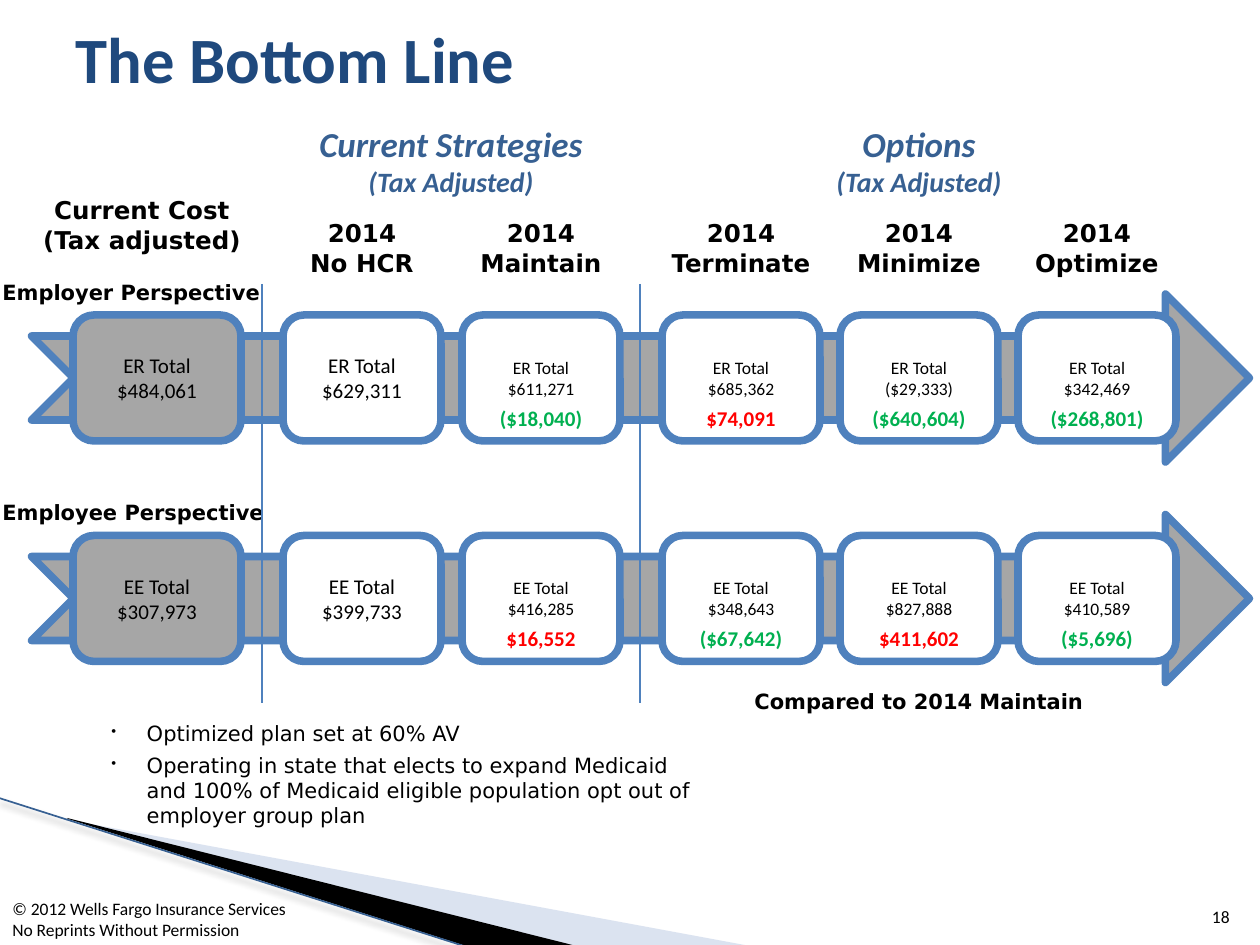
"""Build the slide that sets employer and employee costs side by side."""
from lxml import etree
from pptx import Presentation
from pptx import util as u
from pptx.dml.color import RGBColor
from pptx.enum import shapes, text
from pptx.oxml import parse_xml
from pptx.oxml.ns import nsdecls, qn

PX = 914400 / 126
THEME = {
    "hue": {"navy": "1F497D", "ink": "000000", "blue": "4F81BD", "steel": "376092",
            "gray": "A6A6A6", "white": "FFFFFF", "pale": "A7B9DB",
            "gain": "00B050", "loss": "FF0000"},
    "type": {
        "title": ("Calibri", 36.9, True, False, "navy"),
        "group": ("Calibri", 20, True, True, "steel"),
        "sub": ("Calibri", 16, True, True, "steel"),
        "head": ("DejaVu Sans", 14, True, False, "ink"),
        "label": ("DejaVu Sans", 12, True, False, "ink"),
        "note": ("DejaVu Sans", 12, False, False, "ink"),
        "big": ("Calibri", 12, False, False, "ink"),
        "small": ("Calibri", 10, False, False, "ink"),
        "gain": ("Calibri", 12, True, False, "gain"),
        "loss": ("Calibri", 12, True, False, "loss"),
    },
}

COLS = [
    (73, 168, "gray", "big"), (283, 158, "white", "big"), (462, 158, "white", "small"),
    (662, 158, "white", "small"), (840, 158, "white", "small"), (1018, 158, "white", "small"),
]
HEADS = ["No HCR", "Maintain", "Terminate", "Minimize", "Optimize"]
ROWS = [
    ("Employer Perspective", "ER Total",
     ["$484,061", "$629,311", "$611,271", "$685,362", "($29,333)", "$342,469"],
     [("($18,040)", "gain"), ("$74,091", "loss"), ("($640,604)", "gain"), ("($268,801)", "gain")]),
    ("Employee Perspective", "EE Total",
     ["$307,973", "$399,733", "$416,285", "$348,643", "$827,888", "$410,589"],
     [("$16,552", "loss"), ("($67,642)", "gain"), ("$411,602", "loss"), ("($5,696)", "gain")]),
]
TOP, STEP = 315, 220.5
TEXTS = [
    ((63, 21, 1130, 73), [("The Bottom Line", "title")], "LEFT", "MIDDLE"),
    ((262, 116, 378, 89), [("Current Strategies", "group"), ("(Tax Adjusted)", "sub")], "CENTER", "TOP"),
    ((662, 116, 514, 89), [("Options", "group"), ("(Tax Adjusted)", "sub")], "CENTER", "TOP"),
    ((21, 189, 242, 72), [("Current Cost", "head"), ("(Tax adjusted)", "head")], "CENTER", "TOP"),
    ((662, 682, 514, 38), [("Compared to 2014 Maintain", "label")], "CENTER", "TOP"),
    ((0, 892, 630, 55), [("© 2012 Wells Fargo Insurance Services", "small"),
                         ("No Reprints Without Permission", "small")], "LEFT", "TOP"),
    ((1192, 883, 50, 50), [("18", "small")], "RIGHT", "BOTTOM"),
]
NOTES = ["Optimized plan set at 60% AV",
         "Operating in state that elects to expand Medicaid and 100% of Medicaid "
         "eligible population opt out of employer group plan"]
WEDGES = [
    ([(69, 820), (750, 946), (575, 946), (69, 819)], "pale", 40),
    ([(67, 818), (576, 946), (469, 947), (68, 819)], "ink", 100),
]
RULES = [262, 640]
EDGE = (-1, 798, 467, 947)


def emu(*vals):
    return [u.Emu(round(val * PX)) for val in vals]


def hue(name):
    return RGBColor.from_string(THEME["hue"][name])


def style(font, kind):
    face, size, bold, slant, tint = THEME["type"][kind]
    form = {"name": face, "size": u.Pt(size), "bold": bold, "italic": slant}
    for key, val in form.items():
        setattr(font, key, val)
    font.color.rgb = hue(tint)


def write(shape, lines, align="CENTER", anchor="TOP", bullet=False):
    frame = shape.text_frame
    form = {"word_wrap": True, "vertical_anchor": text.MSO_ANCHOR[anchor]}
    for key, val in form.items():
        setattr(frame, key, val)
    for num, (words, kind) in enumerate(lines):
        para = frame.add_paragraph() if num else frame.paragraphs[0]
        para.alignment = text.PP_ALIGN[align]
        if bullet:
            prop = para._p.get_or_add_pPr()
            prop.set("marL", str(u.Inches(0.4)))
            prop.set("indent", str(u.Inches(-0.28)))
            if num:
                para.space_before = u.Pt(4)
            for tag, key, val in (("a:buSzPct", "val", "68000"), ("a:buChar", "char", "•")):
                etree.SubElement(prop, qn(tag)).set(key, val)
        run = para.add_run()
        run.text = words
        style(run.font, kind)


def label(slide, area, lines, *args, **opts):
    write(slide.shapes.add_textbox(*emu(*area)), lines, *args, **opts)


def block(slide, kind, area, tint):
    shape = slide.shapes.add_shape(shapes.MSO_SHAPE[kind], *emu(*area))
    shape.shadow.inherit = False
    shape.fill.solid()
    shape.fill.fore_color.rgb = hue(tint)
    shape.line.color.rgb = hue("blue")
    shape.line.width = u.Pt(4.33)
    return shape


def wedge(slide, points, tint, alpha):
    form = slide.shapes.build_freeform(*points[0], scale=PX)
    form.add_line_segments(points[1:], close=True)
    shape = form.convert_to_shape()
    shape.shadow.inherit = False
    shape.fill.solid()
    shape.fill.fore_color.rgb = hue(tint)
    shape.line.fill.background()
    fill = shape._element.spPr.find(qn("a:solidFill"))
    etree.SubElement(fill[0], qn("a:alpha")).set("val", str(alpha * 1000))


def rule(slide, ends, tint, width, shade=""):
    line = slide.shapes.add_connector(shapes.MSO_CONNECTOR.STRAIGHT, *emu(*ends))
    line.line.color.rgb = hue(tint)
    line.line.width = u.Pt(width)
    line._element.spPr.append(parse_xml(f"<a:effectLst {nsdecls('a')}>{shade}</a:effectLst>"))


def band(slide, top, name, total, costs, gaps):
    block(slide, "NOTCHED_RIGHT_ARROW", (31.5, top - 21, 1218, 168), "gray")
    label(slide, (-10, top - 42, 305, 38), [(name, "label")], "LEFT")
    for (left, wide, tint, kind), cost in zip(COLS, costs):
        box = block(slide, "ROUNDED_RECTANGLE", (left, top, wide, 126), tint)
        write(box, [(total, kind), (cost, kind)], anchor="MIDDLE")
    for (left, wide, *_), gap in zip(COLS[2:], gaps):
        label(slide, (left - 31, top + 84, wide + 62, 38), [gap])


def main():
    deck = Presentation()
    deck.slide_width, deck.slide_height = emu(1260, 945)
    slide = deck.slides.add_slide(deck.slide_layouts[6])
    for item in WEDGES:
        wedge(slide, *item)
    rule(slide, EDGE, "steel", 0.95,
         '<a:outerShdw blurRad="50800" dist="38100" dir="5400000"><a:srgbClr val="000000">'
         '<a:alpha val="35000"/></a:srgbClr></a:outerShdw>')
    for num, row in enumerate(ROWS):
        band(slide, TOP + num * STEP, *row)
    for left in RULES:
        rule(slide, (left, 284, left, 703), "blue", 1.5)
    for (left, wide, *_), head in zip(COLS[1:], HEADS):
        label(slide, (left - 14, 212, wide + 28, 72), [("2014", "head"), (head, "head")])
    for item in TEXTS:
        label(slide, *item)
    label(slide, (84, 714, 630, 121), [(note, "note") for note in NOTES], "LEFT", bullet=True)
    deck.save("out.pptx")


if __name__ == "__main__":
    main()
